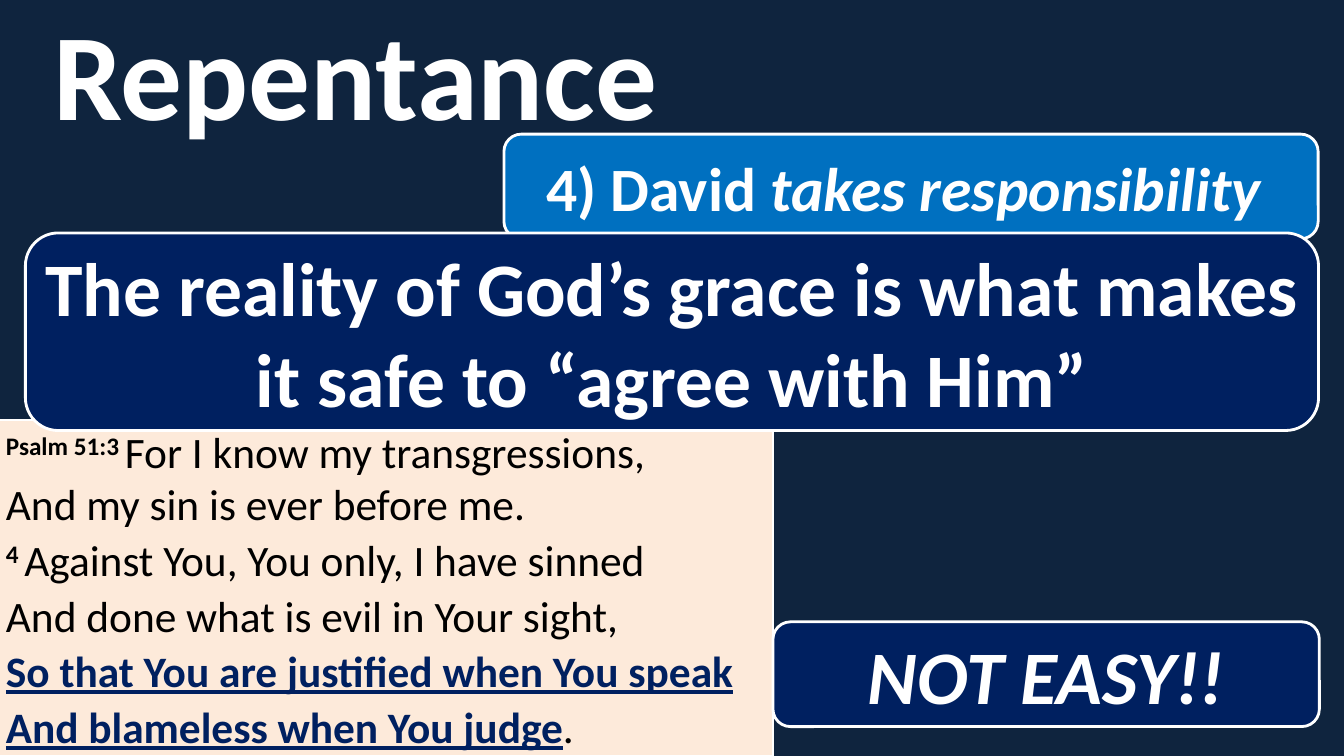
import pptx
import pptx.util
import pptx.dml.color
import pptx.enum.shapes
import pptx.enum.text

Cm, Pt = pptx.util.Cm, pptx.util.Pt
Kind = pptx.enum.shapes.MSO_SHAPE
Align = pptx.enum.text.PP_ALIGN
Anchor = pptx.enum.text.MSO_ANCHOR
Fit = pptx.enum.text.MSO_AUTO_SIZE

HUES = {
    "night": "0F243E",
    "navy": "002060",
    "blue": "0070C0",
    "peach": "FDEADA",
    "white": "FFFFFF",
    "black": "000000",
}


def hue(name):
    """Return the named colour."""
    return pptx.dml.color.RGBColor.from_string(HUES[name])


def write(para, text, size, color, bold=False, italic=False, line=False, lift=False):
    """Add text to a paragraph, with a line break at each newline."""
    for i, part in enumerate(text.split("\n")):
        if i:
            para.add_line_break()
        if not part:
            continue
        run = para.add_run()
        run.text = part
        font = run.font
        font.name, font.size = "Calibri", Pt(size)
        font.bold, font.italic, font.underline = bold, italic, line
        font.color.rgb = hue(color)
        if lift:
            run._r.get_or_add_rPr().set("baseline", "30000")


def place(shape, box):
    """Move a shape to a box given in centimetres."""
    shape.left, shape.top, shape.width, shape.height = map(Cm, box)


def block(slide, box, kind, fill, width):
    """Add a filled shape with a white outline and return its text frame."""
    shape = slide.shapes.add_shape(kind, *map(Cm, box))
    shape.shadow.inherit = False
    shape.fill.solid()
    shape.fill.fore_color.rgb = hue(fill)
    shape.line.color.rgb = hue("white")
    shape.line.width = Pt(width)
    frame = shape.text_frame
    frame.word_wrap = True
    return frame


def head(slide, box, text):
    """Fill the title."""
    title = slide.shapes.title
    place(title, box)
    frame = title.text_frame
    frame.auto_size = Fit.NONE
    frame.vertical_anchor = Anchor.MIDDLE
    para = frame.paragraphs[0]
    para.alignment = Align.CENTER
    write(para, text, 88, "white", bold=True)


def verse(slide, box, paras):
    """Build the scripture panel from paragraphs of text and style pairs."""
    frame = block(slide, box, Kind.RECTANGLE, "peach", 1.5)
    frame.vertical_anchor = Anchor.TOP
    for i, (space, runs) in enumerate(paras):
        para = frame.add_paragraph() if i else frame.paragraphs[0]
        para.alignment = Align.LEFT
        para.line_spacing = space
        for text, style in runs:
            write(para, text, 31, **style)


def card(slide, box, fill, size, runs):
    """Build a rounded card with bold runs of text and italic flag."""
    frame = block(slide, box, Kind.ROUNDED_RECTANGLE, fill, 2)
    frame.vertical_anchor = Anchor.MIDDLE
    para = frame.paragraphs[0]
    para.alignment = Align.CENTER
    for text, italic in runs:
        write(para, text, size, "white", bold=True, italic=italic)


def main():
    """Build and save the slide."""
    deck = pptx.Presentation()
    deck.slide_width, deck.slide_height = Cm(33.87), Cm(19.05)
    slide = deck.slides.add_slide(deck.slide_layouts[5])
    slide.background.fill.solid()
    slide.background.fill.fore_color.rgb = hue("night")

    plain = {"color": "black"}
    mark = {"color": "black", "bold": True, "lift": True}
    key = {"color": "navy", "bold": True, "line": True}

    head(slide, (0, 0.2, 18.62, 3.18), "Repentance ")
    verse(slide, (-0.1, 10.59, 19.58, 8.46), [
        (1.0, [
            ("Psalm 51:3 ", mark),
            ("For I know my transgressions,\nAnd my sin is ever before me.", plain),
        ]),
        (1.07, [
            ("4 ", mark),
            ("Against You, You only, I have sinned\n"
             "And done what is evil in Your sight,\n", plain),
            ("So that You are justified when You speak\n"
             "And blameless when You judge", key),
            (".", plain),
        ]),
    ])
    card(slide, (12.7, 3.38, 20.52, 2.64), "blue", 44,
         [("4) David ", False), ("takes responsibility ", True)])
    card(slide, (19.48, 15.67, 13.77, 2.64), "navy", 54, [("NOT EASY!!", True)])
    card(slide, (0.64, 5.87, 32.59, 4.98), "navy", 54,
         [("The reality of God’s grace is what makes it safe to “agree with Him”", False)])
    deck.save("out.pptx")


if __name__ == "__main__":
    main()
